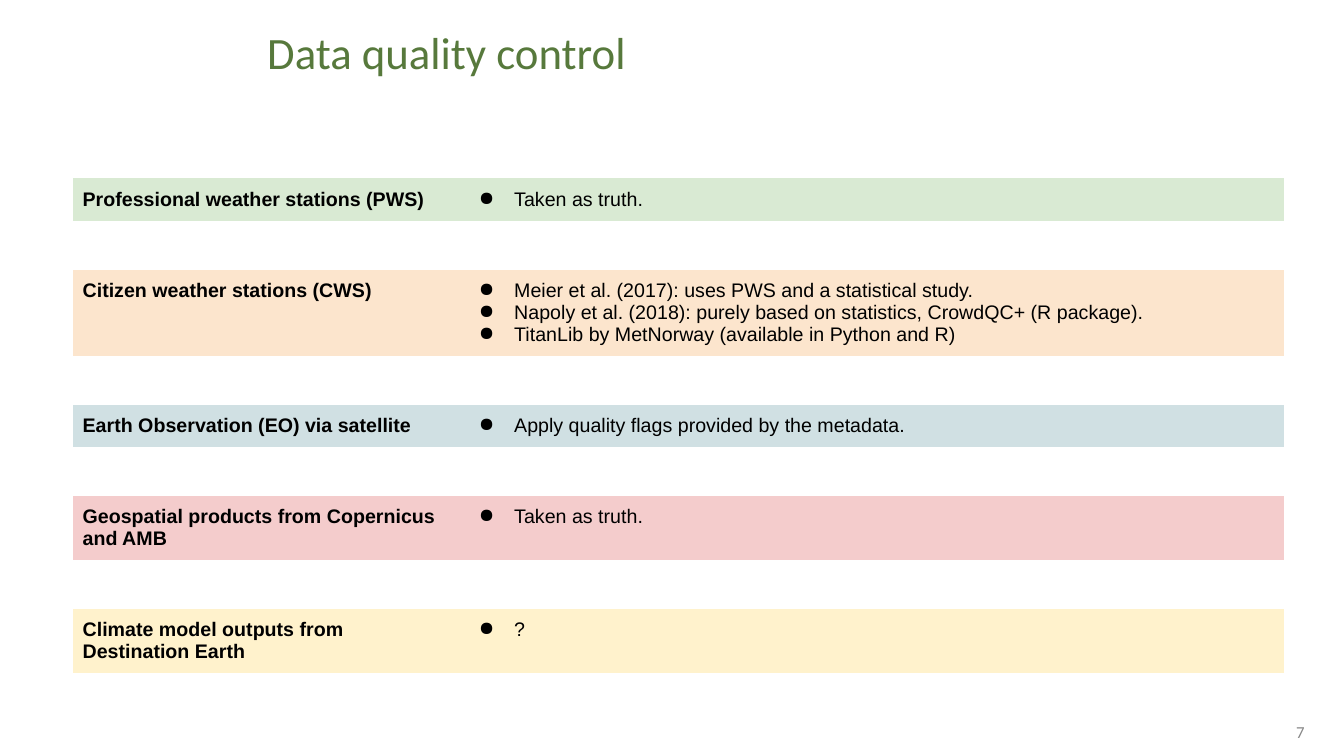
from dataclasses import dataclass

from lxml.etree import SubElement
from pptx import Presentation
from pptx.dml.color import RGBColor
from pptx.enum.text import MSO_ANCHOR, MSO_AUTO_SIZE, PP_ALIGN
from pptx.oxml.ns import qn
from pptx.slide import Slide
from pptx.table import Table, _Cell as Cell
from pptx.text.text import TextFrame, _Paragraph as Paragraph
from pptx.util import Inches, Length, Pt

SLIDE_WIDTH, SLIDE_HEIGHT = Inches(13.33), Inches(7.5)
TITLE_ONLY_LAYOUT = 5
NO_TABLE_STYLE = "{2D5ABB26-0587-4C30-8999-92F81FD0307C}"


@dataclass(frozen=True)
class Theme:
    heading_font: str = "Calibri"
    table_font: str = "Arial"
    title_size: int = 32
    table_size: int = 14
    number_size: int = 12
    title_color: str = "57793C"
    text_color: str = "000000"
    number_color: str = "888888"


@dataclass(frozen=True)
class Box:
    """A place on the slide, in percent of its width and height."""
    left: float
    top: float
    width: float
    height: float

    def place(self) -> tuple[Length, Length, Length, Length]:
        return across(self.left), down(self.top), across(self.width), down(self.height)


@dataclass(frozen=True)
class Source:
    name: str
    checks: tuple[str, ...]
    fill: str
    lines: int = 1


THEME = Theme()
TITLE_BOX = Box(19.13, 0.53, 78.7, 13.6)
NUMBER_BOX = Box(75.32, 94.13, 22.5, 5.33)
TABLE_LEFT, TABLE_TOP = 5.4, 23.6
COLUMN_WIDTHS = (28.36, 61.74)
LINE_HEIGHT, CELL_PADDING, GAP_HEIGHT = 2.9, 2.67, 6.47
CELL_MARGIN = Inches(0.1)

SOURCES = (
    Source("Professional weather stations (PWS)", ("Taken as truth.",), "D9EAD3"),
    Source("Citizen weather stations (CWS)", (
        "Meier et al. (2017): uses PWS and a statistical study.",
        "Napoly et al. (2018): purely based on statistics, CrowdQC+ (R package).",
        "TitanLib by MetNorway (available in Python and R)",
    ), "FCE5CD", lines=3),
    Source("Earth Observation (EO) via satellite",
           ("Apply quality flags provided by the metadata.",), "D0E0E3"),
    Source("Geospatial products from Copernicus and AMB",
           ("Taken as truth.",), "F4CCCC", lines=2),
    Source("Climate model outputs from Destination Earth", ("?",), "FFF2CC", lines=2),
)


def across(percent: float) -> Length:
    return Length(round(SLIDE_WIDTH * percent / 100))


def down(percent: float) -> Length:
    return Length(round(SLIDE_HEIGHT * percent / 100))


def set_font(paragraph: Paragraph, name: str, size: int, color: str,
             bold: bool = False) -> None:
    font = paragraph.font
    font.name, font.size, font.bold = name, Pt(size), bold
    font.color.rgb = RGBColor.from_string(color)


def add_bullet(paragraph: Paragraph) -> None:
    properties = paragraph._p.get_or_add_pPr()
    properties.set("marL", str(Inches(0.5)))
    properties.set("indent", str(Inches(-0.35)))
    color = SubElement(properties, qn("a:buClr"))
    SubElement(color, qn("a:srgbClr"), val=THEME.text_color)
    SubElement(properties, qn("a:buChar"), char="●")


def fill_cell(cell: Cell, lines: tuple[str, ...], fill: str, is_name: bool) -> None:
    cell.margin_left = cell.margin_right = CELL_MARGIN
    cell.margin_top = cell.margin_bottom = CELL_MARGIN
    cell.fill.solid()
    cell.fill.fore_color.rgb = RGBColor.from_string(fill)
    cell.text_frame.text = "\n".join(lines)
    for paragraph in cell.text_frame.paragraphs:
        if not is_name:
            add_bullet(paragraph)
        set_font(paragraph, THEME.table_font, THEME.table_size, THEME.text_color, is_name)


def fill_table(table: Table) -> None:
    """Put each source on an even row, with an unfilled row between sources."""
    table.first_row = table.horz_banding = False
    table._tbl.tblPr.find(qn("a:tableStyleId")).text = NO_TABLE_STYLE
    for column, width in zip(table.columns, COLUMN_WIDTHS):
        column.width = across(width)
    for row in table.rows:
        row.height = down(GAP_HEIGHT)
        for cell in row.cells:
            cell.fill.background()
    for index, source in enumerate(SOURCES):
        row = table.rows[2 * index]
        row.height = down(CELL_PADDING + LINE_HEIGHT * source.lines)
        name_cell, checks_cell = row.cells
        fill_cell(name_cell, (source.name,), source.fill, is_name=True)
        fill_cell(checks_cell, source.checks, source.fill, is_name=False)


def set_heading(frame: TextFrame, text: str, size: int, color: str,
                alignment: PP_ALIGN) -> Paragraph:
    frame.word_wrap = True
    frame.auto_size = MSO_AUTO_SIZE.NONE
    frame.vertical_anchor = MSO_ANCHOR.MIDDLE
    frame.text = text
    paragraph = frame.paragraphs[0]
    paragraph.alignment = alignment
    set_font(paragraph, THEME.heading_font, size, color)
    return paragraph


def add_title(slide: Slide) -> None:
    title = slide.shapes.title
    title.left, title.top, title.width, title.height = TITLE_BOX.place()
    paragraph = set_heading(title.text_frame, "Data quality control", THEME.title_size,
                            THEME.title_color, PP_ALIGN.LEFT)
    paragraph.line_spacing = 0.9


def add_source_table(slide: Slide) -> None:
    row_count = 2 * len(SOURCES) - 1
    height = sum(CELL_PADDING + LINE_HEIGHT * source.lines for source in SOURCES)
    height += GAP_HEIGHT * (len(SOURCES) - 1)
    box = Box(TABLE_LEFT, TABLE_TOP, sum(COLUMN_WIDTHS), height)
    frame = slide.shapes.add_table(row_count, len(COLUMN_WIDTHS), *box.place())
    fill_table(frame.table)


def add_slide_number(slide: Slide) -> None:
    box = slide.shapes.add_textbox(*NUMBER_BOX.place())
    set_heading(box.text_frame, "7", THEME.number_size, THEME.number_color, PP_ALIGN.RIGHT)


def main() -> None:
    presentation = Presentation()
    presentation.slide_width, presentation.slide_height = SLIDE_WIDTH, SLIDE_HEIGHT
    slide = presentation.slides.add_slide(presentation.slide_layouts[TITLE_ONLY_LAYOUT])
    add_title(slide)
    add_source_table(slide)
    add_slide_number(slide)
    presentation.save("out.pptx")


if __name__ == "__main__":
    main()
